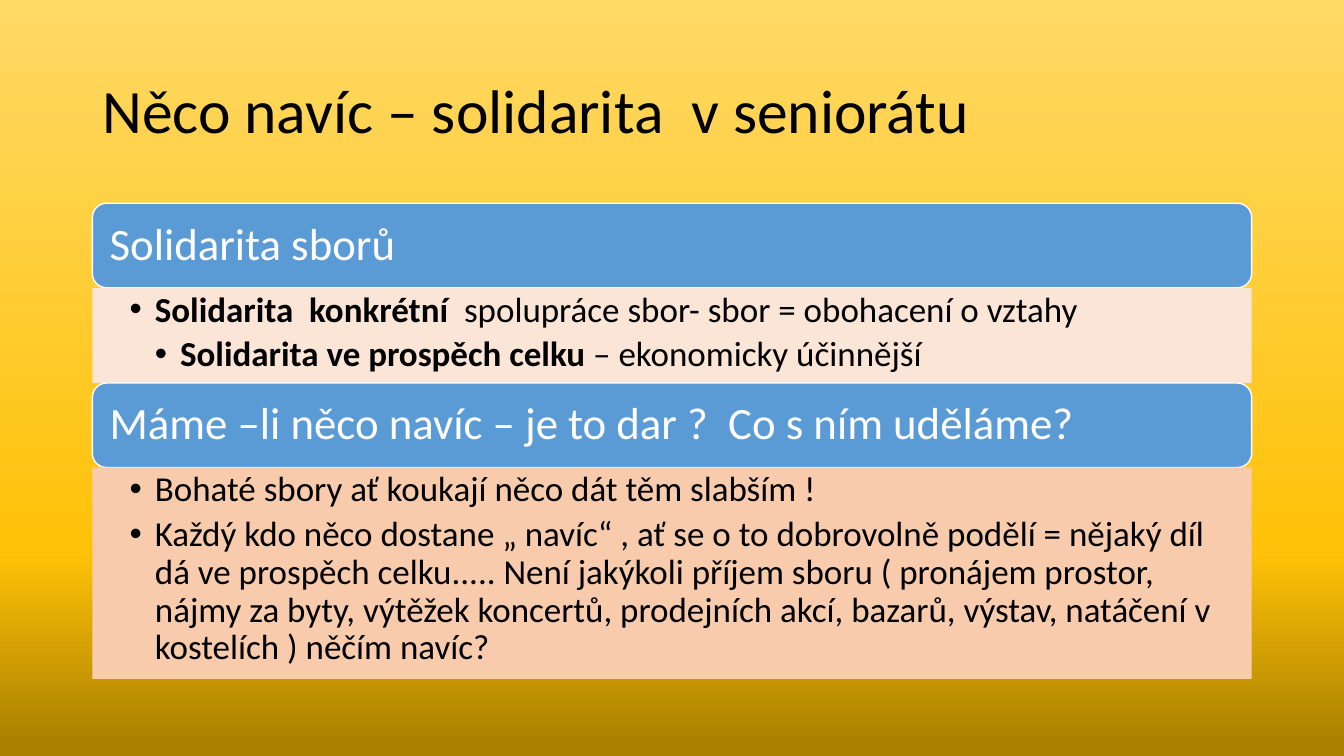
from copy import deepcopy

from lxml import etree
from pptx import Presentation, util as u
from pptx.dml.color import RGBColor
from pptx.enum import shapes, text
from pptx.oxml import ns

COLORS = {
    "dark": "AB8100", "gold": "FFC208", "light": "FFD966",
    "blue": "5B9BD5", "white": "FFFFFF", "black": "000000",
    "pale": "FBE5D6", "peach": "F8CBAD",
}


class Deck:
    """Holds the slide and its style on a grid of 80 columns by 45 rows."""

    FONT = "Calibri"
    LEFT, WIDTH = 5.5, 69

    def __init__(self):
        self.prs = Presentation()
        self.prs.slide_width, self.prs.slide_height = u.Inches(13.33), u.Inches(7.5)
        self.col, self.row = self.prs.slide_width / 80, self.prs.slide_height / 45
        self.s = self.prs.slides.add_slide(self.prs.slide_layouts[6])

    def color(self, name):
        return RGBColor.from_string(COLORS[name])

    def place(self, top, height):
        return (round(self.LEFT * self.col), round(top * self.row),
                round(self.WIDTH * self.col), round(height * self.row))

    def background(self, stops):
        fill = self.s.background.fill
        fill.gradient()
        fill.gradient_angle = 90
        gs = self.s.element.find(".//" + ns.qn("a:gs"))
        gs.addnext(deepcopy(gs))
        for stop, (position, name) in zip(fill.gradient_stops, stops):
            stop.position = position
            stop.color.rgb = self.color(name)

    def frame(self, sp, insets, anchor):
        tf = sp.text_frame
        tf.word_wrap = True
        tf.vertical_anchor = anchor
        tf.margin_left, tf.margin_top, tf.margin_right, tf.margin_bottom = map(u.Inches, insets)
        return tf

    def style(self, p, size, name, bold=False):
        p.alignment = text.PP_ALIGN.LEFT
        p.line_spacing = 0.9
        for r in p.runs:
            r.font.name, r.font.size = self.FONT, u.Pt(size)
            r.font.color.rgb = self.color(name)
            r.font.bold = bold

    def box(self, kind, top, height, fill):
        sp = self.s.shapes.add_shape(kind, *self.place(top, height))
        sp.shadow.inherit = False
        sp.fill.solid()
        sp.fill.fore_color.rgb = self.color(fill)
        sp.line.fill.background()
        return sp

    def title(self, words, top, height):
        sp = self.s.shapes.add_textbox(*self.place(top, height))
        tf = self.frame(sp, (0.1, 0.05, 0.1, 0.05), text.MSO_ANCHOR.MIDDLE)
        tf.text = words
        self.style(tf.paragraphs[0], 44, "black")

    def header(self, words, top, height):
        sp = self.box(shapes.MSO_SHAPE.ROUNDED_RECTANGLE, top, height, "blue")
        sp.line.color.rgb = self.color("white")
        sp.line.width = u.Pt(1)
        tf = self.frame(sp, (0.13, 0.13, 0.13, 0.13), text.MSO_ANCHOR.MIDDLE)
        tf.text = words
        self.style(tf.paragraphs[0], 32, "white")

    def bullets(self, items, top, height, fill):
        sp = self.box(shapes.MSO_SHAPE.RECTANGLE, top, height, fill)
        tf = self.frame(sp, (0.37, 0.04, 0.25, 0.04), text.MSO_ANCHOR.TOP)
        for i, (level, strong, plain) in enumerate(items):
            p = tf.add_paragraph() if i else tf.paragraphs[0]
            p.text = strong or plain
            self.style(p, 25, "black", bold=bool(strong))
            if strong:
                r = p.add_run()
                r.text = plain
                self.style(p, 25, "black")
                p.runs[0].font.bold = True
            p.level = level
            p.space_after = u.Pt(5)
            pPr = p._p.get_or_add_pPr()
            pPr.set("marL", str(u.Inches(0.25 * level)))
            pPr.set("indent", str(u.Inches(-0.25)))
            etree.SubElement(pPr, ns.qn("a:buFont"), typeface="Arial")
            etree.SubElement(pPr, ns.qn("a:buChar"), char="•")


def main():
    d = Deck()
    d.background([(0.02, "dark"), (0.27, "gold"), (1, "light")])
    d.title("Něco navíc – solidarita  v seniorátu", 2.4, 8.7)
    sections = [
        ("Solidarita sborů", "pale", 5.67, [
            (1, "Solidarita  konkrétní ", " spolupráce sbor- sbor = obohacení o vztahy"),
            (2, "Solidarita ve prospěch celku ", "– ekonomicky účinnější"),
        ]),
        ("Máme –li něco navíc – je to dar ?  Co s ním uděláme?", "peach", 12.58, [
            (1, "", "Bohaté sbory ať koukají něco dát těm slabším !"),
            (1, "", "Každý kdo něco dostane „ navíc“ , ať se o to dobrovolně podělí = nějaký díl "
                    "dá ve prospěch celku..... Není jakýkoli příjem sboru ( pronájem prostor, "
                    "nájmy za byty, výtěžek koncertů, prodejních akcí, bazarů, výstav, natáčení v "
                    "kostelích ) něčím navíc?"),
        ]),
    ]
    top, header_height = 12.1, 5.03
    for heading, fill, height, items in sections:
        d.header(heading, top, header_height)
        d.bullets(items, top + header_height, height, fill)
        top += header_height + height
    d.prs.save("out.pptx")


if __name__ == "__main__":
    main()
